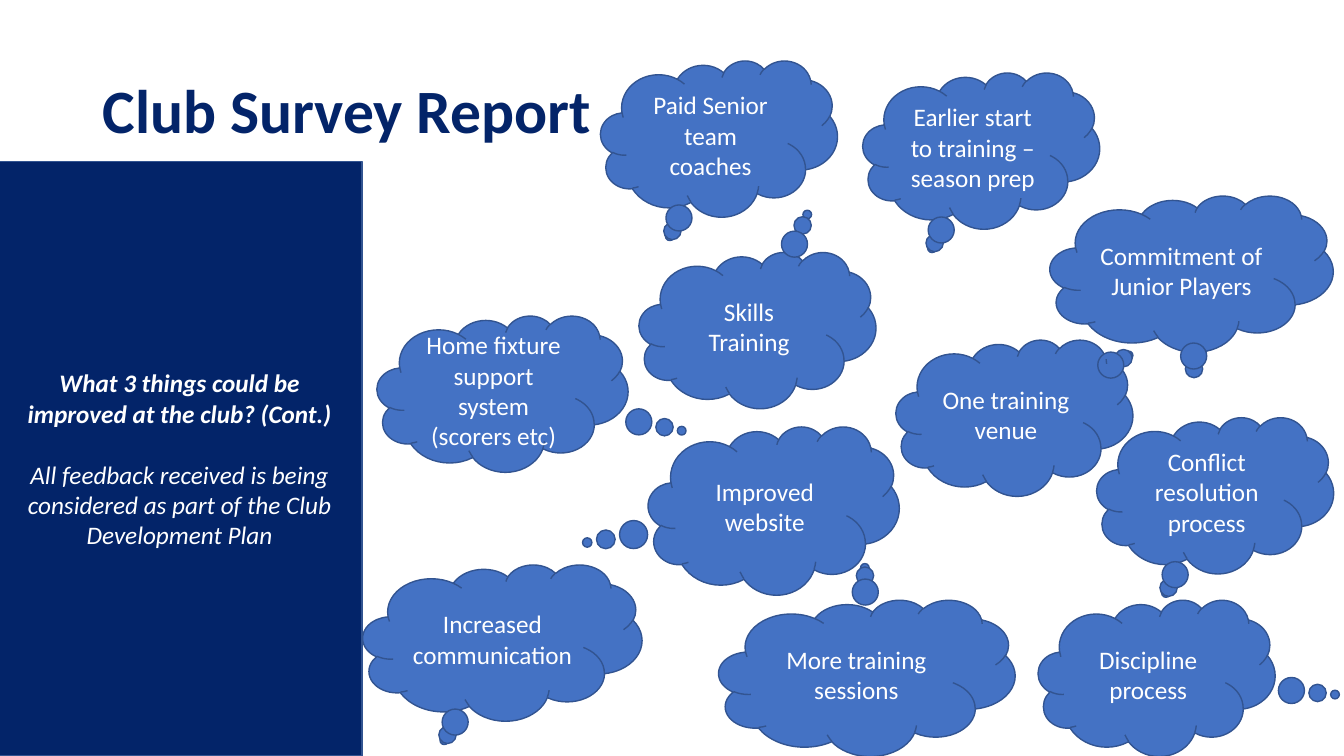
"""Build the club survey slide of suggested improvements in thought clouds."""
from pptx import Presentation
from pptx.dml.color import RGBColor
from pptx.enum.shapes import MSO_SHAPE
from pptx.enum.text import MSO_ANCHOR, MSO_AUTO_SIZE, PP_ALIGN
from pptx.util import Pt

COLORS = {"navy": "032469", "blue": "4472C4", "outline": "325491", "white": "FFFFFF"}
FONT = "Calibri"
HEADING = "Club Survey Report"
QUESTION = "What 3 things could be improved at the club? (Cont.)"
RESPONSE = "All feedback received is being considered as part of the Club Development Plan"

WIDTH, HEIGHT = 169.2, 111.6
TAIL = (-0.208, 0.625)
SUGGESTIONS = [
    ("Paid Senior team coaches", 429, 43.2, {}),
    ("Commitment of Junior Players", 750, 139.7, {"width": 202.3, "tail": (0.009, 0.637)}),
    ("Conflict resolution process", 783.4, 298, {}),
    ("Increased communication", 259.2, 403.2, {"width": 199.4}),
    ("More training sessions", 513.4, 428.4, {"width": 211.7, "tail": (-0.007, -0.704)}),
    ("One training venue", 640, 242.6, {"tail": (0.482, -0.399)}),
    ("Home fixture support system (scorers etc)", 269.3, 225.4,
     {"width": 179.3, "tail": (0.714, 0.237)}),
    ("Skills Training", 456.5, 180, {"tail": (0.21, -0.74)}),
    ("Earlier start to training – season prep", 616.3, 51.8, {}),
    ("Discipline process", 741.6, 428.4, {"tail": (0.753, 0.107)}),
    ("Improved website", 463, 304.6,
     {"width": 179.3, "height": 120.2, "tail": (-0.743, 0.19)}),
]


def rgb(name):
    """Return the named colour."""
    return RGBColor.from_string(COLORS[name])


def write(paragraph, text, size=18, color="white", bold=False, italic=False,
          align=PP_ALIGN.CENTER, spacing=1.0, before=0):
    """Fill a paragraph with formatted text."""
    paragraph.alignment = align
    paragraph.line_spacing = spacing
    paragraph.space_before = Pt(before)
    run = paragraph.add_run()
    run.text = text
    run.font.name, run.font.size = FONT, Pt(size)
    run.font.bold, run.font.italic = bold, italic
    run.font.color.rgb = rgb(color)


def add_block(slide, kind, left, top, width, height, fill):
    """Add an outlined shape and return it."""
    block = slide.shapes.add_shape(kind, Pt(left), Pt(top), Pt(width), Pt(height))
    block.shadow.inherit = False
    block.fill.solid()
    block.fill.fore_color.rgb = rgb(fill)
    block.line.color.rgb = rgb("outline")
    block.line.width = Pt(1)
    block.text_frame.word_wrap = True
    block.text_frame.vertical_anchor = MSO_ANCHOR.MIDDLE
    return block


def add_cloud(slide, text, left, top, width=WIDTH, height=HEIGHT, tail=TAIL):
    """Add one suggestion in a thought cloud."""
    cloud = add_block(slide, MSO_SHAPE.CLOUD_CALLOUT, left, top, width, height, "blue")
    cloud.adjustments[0], cloud.adjustments[1] = tail
    write(cloud.text_frame.paragraphs[0], text)


def main():
    """Assemble and save the slide."""
    deck = Presentation()
    deck.slide_width, deck.slide_height = Pt(960), Pt(540)
    slide = deck.slides.add_slide(deck.slide_layouts[5])

    heading = slide.shapes.title
    heading.left, heading.top, heading.width, heading.height = Pt(66), Pt(28.8), Pt(828), Pt(104.4)
    heading.text_frame.auto_size = MSO_AUTO_SIZE.NONE
    heading.text_frame.vertical_anchor = MSO_ANCHOR.MIDDLE
    write(heading.text_frame.paragraphs[0], HEADING, size=44, color="navy", bold=True,
          align=PP_ALIGN.LEFT, spacing=0.9)

    panel = add_block(slide, MSO_SHAPE.RECTANGLE, -2, 115.2, 260.6, 424.8, "navy")
    write(panel.text_frame.paragraphs[0], QUESTION, bold=True, italic=True)
    write(panel.text_frame.add_paragraph(), RESPONSE, italic=True, before=22)

    for text, left, top, options in SUGGESTIONS:
        add_cloud(slide, text, left, top, **options)

    deck.save("out.pptx")


if __name__ == "__main__":
    main()
